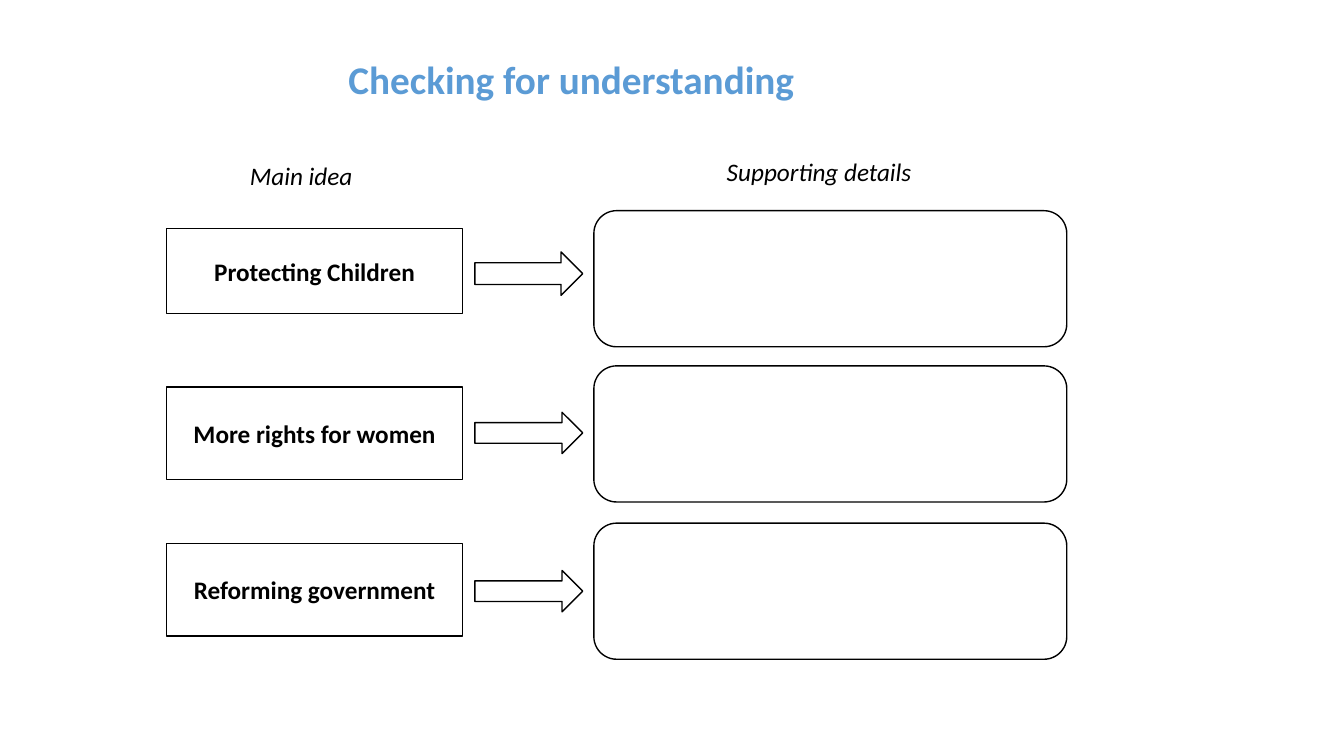
from pptx import Presentation
from pptx import util as u
from pptx.dml.color import RGBColor
from pptx.enum import shapes, text

PX = 9144
COLORS = {"ink": "000000", "paper": "FFFFFF", "title": "5B9BD5"}
KIND = shapes.MSO_SHAPE


class Board:
    font = "Calibri"

    def __init__(self, deck):
        self.slide = deck.slides.add_slide(deck.slide_layouts[5])

    def color(self, name):
        return RGBColor.from_string(COLORS[name])

    def letter(self, frame, words, size=18, color="ink", bold=False,
               italic=False, align=text.PP_ALIGN.CENTER,
               anchor=text.MSO_ANCHOR.MIDDLE):
        frame.text = words
        frame.word_wrap = True
        frame.auto_size = text.MSO_AUTO_SIZE.NONE
        frame.vertical_anchor = anchor
        para = frame.paragraphs[0]
        para.alignment = align
        font = para.font
        font.name, font.size = self.font, u.Pt(size)
        font.bold, font.italic = bold, italic
        font.color.rgb = self.color(color)

    def title(self, words, *box):
        head = self.slide.shapes.title
        head.left, head.top, head.width, head.height = (n * PX for n in box)
        self.letter(head.text_frame, words, 28, "title", bold=True,
                    anchor=text.MSO_ANCHOR.TOP)

    def label(self, words, *box):
        item = self.slide.shapes.add_textbox(*(n * PX for n in box))
        self.letter(item.text_frame, words, italic=True,
                    align=text.PP_ALIGN.LEFT, anchor=text.MSO_ANCHOR.TOP)

    def shape(self, kind, *box, words=None):
        item = self.slide.shapes.add_shape(kind, *(n * PX for n in box))
        item.shadow.inherit = False
        item.fill.solid()
        item.fill.fore_color.rgb = self.color("paper")
        item.line.color.rgb = self.color("ink")
        item.line.width = u.Pt(1)
        if words:
            self.letter(item.text_frame, words, bold=True)


def main():
    deck = Presentation()
    deck.slide_width, deck.slide_height = 1333 * PX, 750 * PX
    board = Board(deck)
    board.title("Checking for understanding", 285, 50, 563, 57)
    board.label("Main idea", 238, 154, 164, 40)
    board.label("Supporting details", 711, 150, 273, 40)

    rows = [
        ("Protecting Children", (227, 84), (250, 43), 209),
        ("More rights for women", (384, 92), (409, 41), 363),
        ("Reforming government", (539, 92), (566, 41), 519),
    ]
    for idea, (top, high), (tip, thick), detail in rows:
        board.shape(KIND.RECTANGLE, 165, top, 294, high, words=idea)
        board.shape(KIND.RIGHT_ARROW, 471, tip, 107, thick)
        board.shape(KIND.ROUNDED_RECTANGLE, 589, detail, 469, 135)
    deck.save("out.pptx")


if __name__ == "__main__":
    main()
